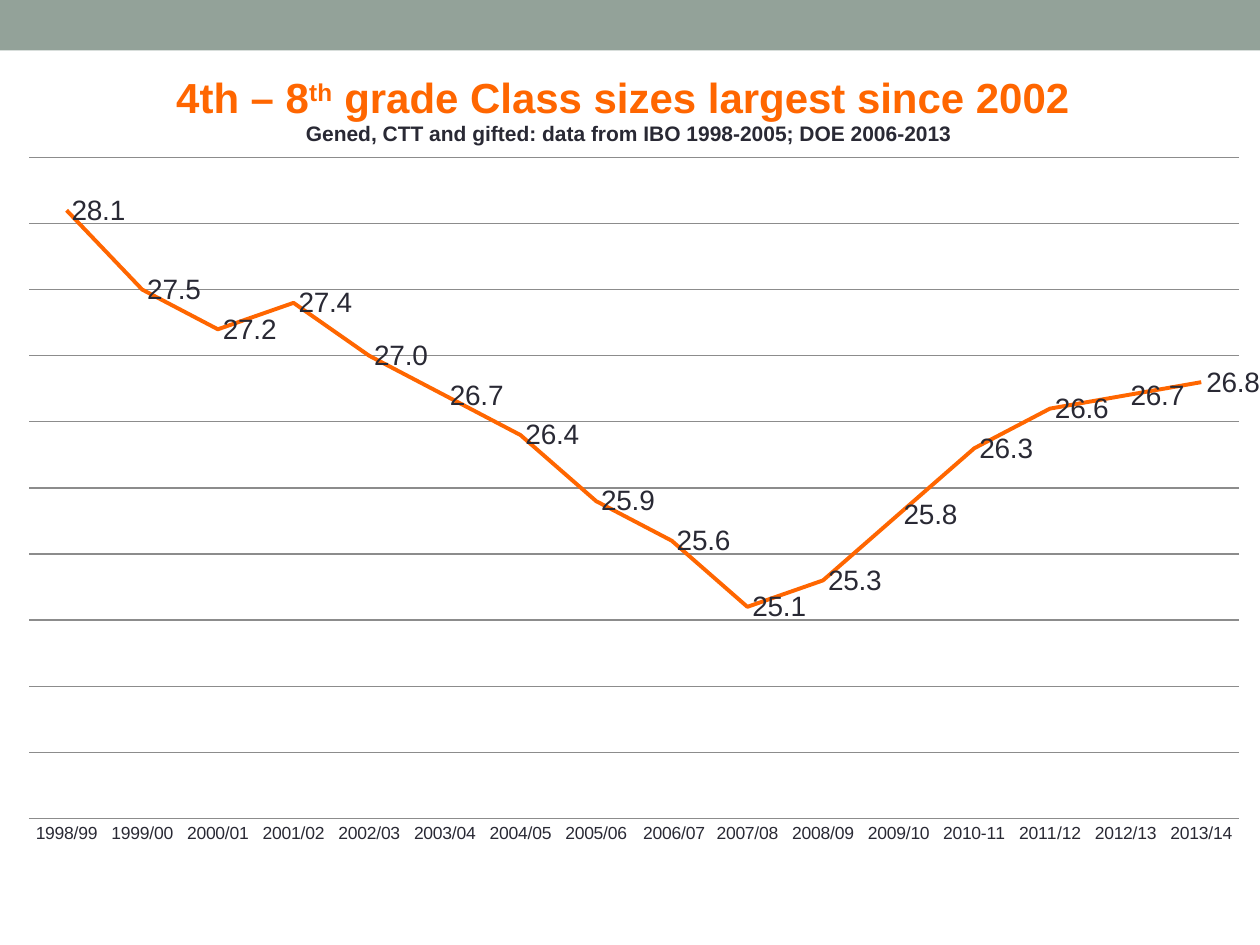
import pptx
import pptx.chart.data
import pptx.dml.color
import pptx.enum.chart
import pptx.enum.shapes
import pptx.oxml
import pptx.oxml.ns
import pptx.util

WIDTH, HEIGHT = 10, 7.5
ORANGE, INK, SAGE, GRID = "FF6600", "292934", "93A299", "8C8C8C"
YEARS = ["1998/99", "1999/00", "2000/01", "2001/02", "2002/03", "2003/04",
         "2004/05", "2005/06", " 2006/07", "2007/08", "2008/09", "2009/10",
         "2010-11", "2011/12", "2012/13", "2013/14"]
CLASS_SIZES = [28.1, 27.5, 27.2, 27.4, 27, 26.7, 26.4, 25.9,
               25.6, 25.1, 25.3, 25.8, 26.3, 26.6, 26.7, 26.8]


def rgb(value):
    """Return the colour of a hex string."""
    return pptx.dml.color.RGBColor.from_string(value)


def set_font(font, size, color, bold=False):
    """Format a font in Arial."""
    font.name = "Arial"
    font.size = pptx.util.Pt(size)
    font.bold = bold
    font.color.rgb = rgb(color)


def set_line(line, color, width):
    """Format a line with a colour and a width in points."""
    line.color.rgb = rgb(color)
    line.width = pptx.util.Pt(width)


def set_layout(parent, index, **shares):
    """Place a chart part by shares of the chart's size."""
    for old in parent.findall(pptx.oxml.ns.qn("c:layout")):
        parent.remove(old)
    target = '<c:layoutTarget val="inner"/>' if "w" in shares else ""
    modes = "".join(f'<c:{k}Mode val="edge"/>' for k in shares if k in "xy")
    values = "".join(f'<c:{k} val="{v}"/>' for k, v in shares.items())
    parent.insert(index, pptx.oxml.parse_xml(
        f'<c:layout {pptx.oxml.ns.nsdecls("c")}><c:manualLayout>'
        f"{target}{modes}{values}</c:manualLayout></c:layout>"))


def add_band(s):
    """Add the band across the top of the slide."""
    sp = s.shapes.add_shape(pptx.enum.shapes.MSO_SHAPE.RECTANGLE, 0, 0,
                            pptx.util.Inches(WIDTH), pptx.util.Inches(0.4))
    sp.shadow.inherit = False
    sp.fill.solid()
    sp.fill.fore_color.rgb = rgb(SAGE)
    sp.line.fill.background()


def add_title(chart):
    """Write the chart's heading and its source line."""
    tf = chart.chart_title.text_frame
    p = tf.paragraphs[0]
    set_font(p.font, 24, ORANGE, True)
    for text, baseline in (("4th – 8", 0), ("th", 30000),
                           (" grade Class sizes largest since 2002 ", 0)):
        r = p.add_run()
        r.text = text
        set_font(r.font, 24, ORANGE, True)
        if baseline:
            r.font._element.set("baseline", str(baseline))
    p = tf.add_paragraph()
    set_font(p.font, 12, INK, True)
    r = p.add_run()
    r.text = "Gened, CTT and gifted: data from IBO 1998-2005; DOE 2006-2013"
    set_font(r.font, 12, INK, True)
    set_layout(chart.chart_title._element, 1, x=0.13, y=0.03)


def format_axes(chart):
    """Format the year axis and hide the value axis behind its gridlines."""
    none = pptx.enum.chart.XL_TICK_MARK.NONE
    years, sizes = chart.category_axis, chart.value_axis
    years.major_tick_mark = years.minor_tick_mark = none
    set_font(years.tick_labels.font, 10, INK)
    set_line(years.format.line, GRID, 0.75)
    sizes.minimum_scale, sizes.maximum_scale = 23.5, 28.5
    sizes.major_unit = 0.5
    sizes.has_major_gridlines = True
    set_line(sizes.major_gridlines.format.line, GRID, 0.75)
    sizes.visible = False


def format_series(series):
    """Format the line and its value labels."""
    series.smooth = False
    series.marker.style = pptx.enum.chart.XL_MARKER_STYLE.NONE
    set_line(series.format.line, ORANGE, 2.25)
    labels = series.data_labels
    labels.show_value = True
    labels.number_format = "0.0"
    labels.number_format_is_linked = False
    labels.position = pptx.enum.chart.XL_LABEL_POSITION.RIGHT
    set_font(labels.font, 16, INK)


def add_line_chart(s):
    """Add the line chart of class sizes by school year."""
    data = pptx.chart.data.CategoryChartData(number_format="0.0")
    data.categories = YEARS
    data.add_series("Series 1", CLASS_SIZES)
    box = [pptx.util.Inches(v) for v in (0.08, 0.33, 9.92, 7.42)]
    chart = s.shapes.add_chart(
        pptx.enum.chart.XL_CHART_TYPE.LINE, *box, data).chart
    chart.has_legend = False
    set_font(chart.font, 10, INK)
    add_title(chart)
    format_axes(chart)
    format_series(chart.plots[0].series[0])
    plot_area = chart._chartSpace.chart.plotArea
    set_layout(plot_area, 0, x=0.015, y=0.124, w=0.969, h=0.707)


def main():
    """Build and save the slide."""
    prs = pptx.Presentation()
    prs.slide_width = pptx.util.Inches(WIDTH)
    prs.slide_height = pptx.util.Inches(HEIGHT)
    s = prs.slides.add_slide(prs.slide_layouts[6])
    add_band(s)
    add_line_chart(s)
    prs.save("out.pptx")


if __name__ == "__main__":
    main()
